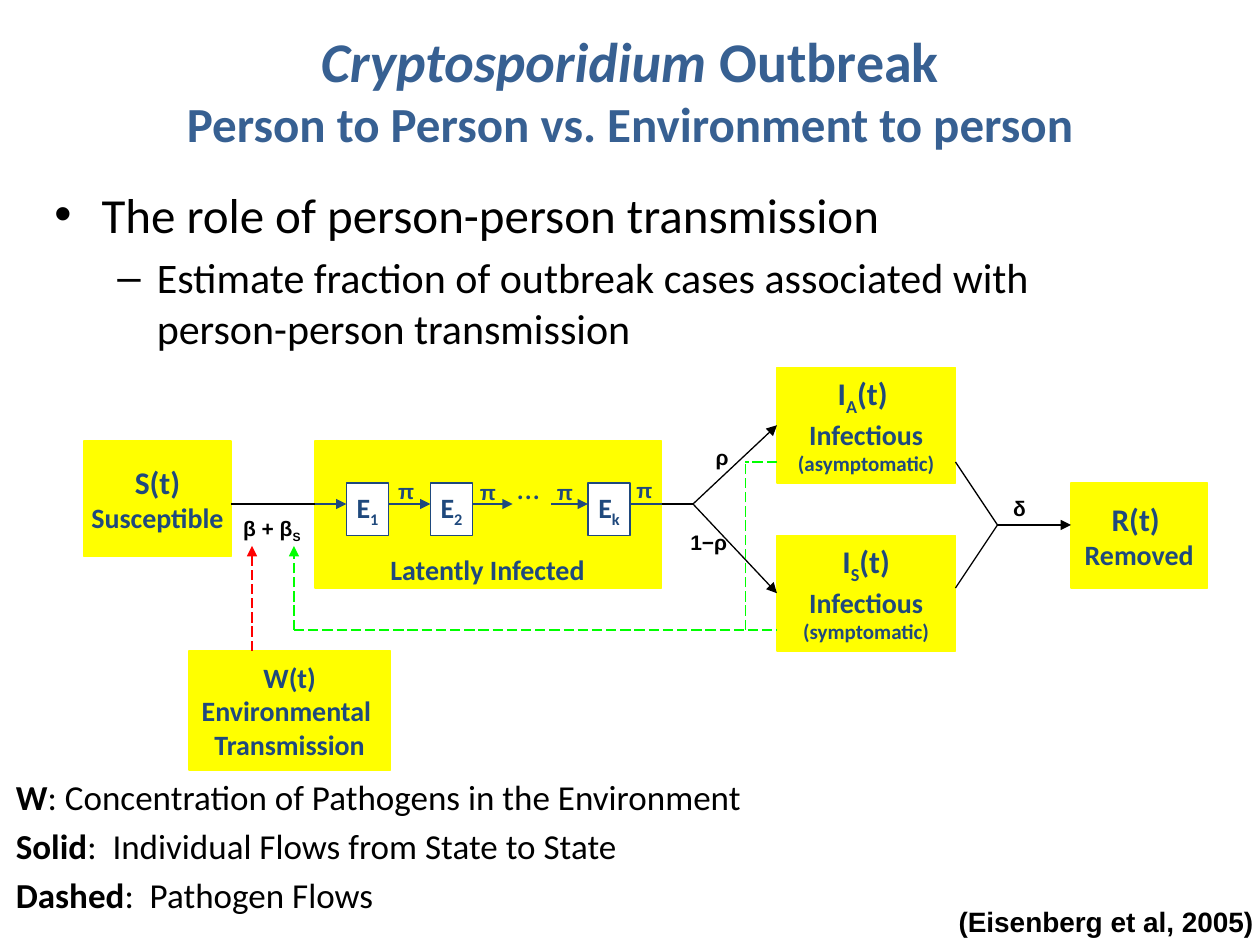
from dataclasses import dataclass

from lxml.etree import SubElement
from pptx import Presentation
from pptx.dml.color import RGBColor
from pptx.enum.dml import MSO_LINE
from pptx.enum.shapes import MSO_CONNECTOR, MSO_SHAPE
from pptx.enum.text import MSO_ANCHOR, PP_ALIGN
from pptx.oxml.ns import qn
from pptx.util import Pt


@dataclass(frozen=True)
class Theme:
    title: str = "376092"
    navy: str = "1F497D"
    black: str = "000000"
    white: str = "FFFFFF"
    yellow: str = "FFFF00"
    red: str = "FF0000"
    green: str = "00FF00"
    font: str = "Calibri"
    label_font: str = "Arial"
    heading: int = 32
    subheading: int = 28
    bullet: int = 28
    subbullet: int = 24
    legend: int = 20
    state: int = 18
    name: int = 16
    small: int = 12
    line: float = 0.75


THEME = Theme()
FLOW_Y = 288
SPLIT = (396, FLOW_Y)
MERGE = (570, 300)
LEFT_SIDE = 1


def span(text, **changes):
    """A piece of a line whose format differs from the rest."""
    return text, changes


def sub(text):
    return span(text, subscript=True)


def write(frame, lines, align=PP_ALIGN.LEFT, space_before=0, line_spacing=None, **base):
    """Fill a frame; a line is a list of strings and spans, "\\v" breaks a line."""
    for index, pieces in enumerate(lines):
        paragraph = frame.add_paragraph() if index else frame.paragraphs[0]
        paragraph.alignment = align
        paragraph.space_before = Pt(space_before)
        if line_spacing:
            paragraph.line_spacing = line_spacing
        for piece in pieces:
            text, changes = piece if isinstance(piece, tuple) else (piece, {})
            if text == "\v":
                paragraph.add_line_break()
                continue
            look = {"size": THEME.name, "font": THEME.font, "color": THEME.navy,
                    "bold": False, "italic": False, **base, **changes}
            run = paragraph.add_run()
            run.text = text
            run.font.name = look["font"]
            run.font.size = Pt(look["size"])
            run.font.bold = look["bold"]
            run.font.italic = look["italic"]
            run.font.color.rgb = RGBColor.from_string(look["color"])
            if look.get("subscript"):
                run._r.get_or_add_rPr().set("baseline", "-25000")


def add_text(slide, place, lines, inset=None, wrap=True, **look):
    frame = slide.shapes.add_textbox(*map(Pt, place)).text_frame
    frame.word_wrap = wrap
    if inset is not None:
        frame.margin_left = frame.margin_right = Pt(inset)
        frame.margin_top = frame.margin_bottom = Pt(inset)
    write(frame, lines, **look)
    return frame


def add_label(slide, left, top, pieces, width=12.24, color=THEME.black):
    add_text(slide, (left, top, width, 18.72), [pieces], inset=0.72,
             size=THEME.small, font=THEME.label_font, bold=True, color=color)


def add_box(slide, place, lines=(), fill=THEME.yellow, outline=THEME.yellow):
    box = slide.shapes.add_shape(MSO_SHAPE.RECTANGLE, *map(Pt, place))
    box.shadow.inherit = False
    box.fill.solid()
    box.fill.fore_color.rgb = RGBColor.from_string(fill)
    box.line.color.rgb = RGBColor.from_string(outline)
    box.line.width = Pt(THEME.line)
    box.text_frame.word_wrap = False
    box.text_frame.vertical_anchor = MSO_ANCHOR.MIDDLE
    write(box.text_frame, lines, align=PP_ALIGN.CENTER, bold=True)
    return box


def add_flow(slide, start, end, color=THEME.black, arrow=True, dashed=False):
    flow = slide.shapes.add_connector(MSO_CONNECTOR.STRAIGHT, *map(Pt, (*start, *end)))
    flow.line.color.rgb = RGBColor.from_string(color)
    flow.line.width = Pt(THEME.line)
    if dashed:
        flow.line.dash_style = MSO_LINE.LONG_DASH
    properties = flow.element.spPr
    if arrow:
        SubElement(properties.find(qn("a:ln")), qn("a:tailEnd"), type="triangle")
    SubElement(properties, qn("a:effectLst"))
    return flow


def add_title(slide):
    title = slide.shapes.title
    title.left, title.top, title.width, title.height = map(Pt, (36, 6, 648, 90))
    title.text_frame.vertical_anchor = MSO_ANCHOR.MIDDLE
    write(title.text_frame,
          [[span("Cryptosporidium", italic=True), " Outbreak", "\v",
            span("Person to Person vs. Environment to person", size=THEME.subheading)]],
          align=PP_ALIGN.CENTER, size=THEME.heading, bold=True, color=THEME.title)


def add_bullets(slide):
    frame = add_text(
        slide, (24, 102, 648, 114),
        [[span("The role of person-person transmission", size=THEME.bullet)],
         ["Estimate fraction of outbreak cases associated with person-person transmission"]],
        size=THEME.subbullet, color=THEME.black)
    levels = (("•", 27, 27, THEME.bullet), ("–", 58.5, 22.5, THEME.subbullet))
    for level, (mark, indent, hanging, size) in enumerate(levels):
        paragraph = frame.paragraphs[level]
        paragraph.level = level
        paragraph.space_before = Pt(0.2 * size)
        properties = paragraph._p.get_or_add_pPr()
        properties.set("marL", str(Pt(indent)))
        properties.set("indent", str(-Pt(hanging)))
        SubElement(properties, qn("a:buFont"), typeface="Arial")
        SubElement(properties, qn("a:buChar"), char=mark)


def add_states(slide):
    """Draw the compartments and return the two infectious ones."""
    def state(*pieces):
        return [span(p, size=THEME.state) if isinstance(p, str)
                else span(p[0], size=THEME.state, **p[1]) for p in pieces]

    add_box(slide, (180, 252, 198, 84))
    add_box(slide, (48, 252, 84, 66), [state("S(t)"), ["Susceptible"]])
    for left, stage in ((198, "1"), (246, "2"), (336, "k")):
        add_box(slide, (left, 276, 24, 30), [["E", sub(stage)]], THEME.white, THEME.navy)
    add_box(slide, (612, 276, 78, 60), [state("R(t) "), ["Removed"]])
    add_box(slide, (108, 372, 115, 68), [["W(t)"], ["Environmental "], ["Transmission"]])
    return [add_box(slide, (444, top, 102, 66),
                    [state("I", sub(mark), tail), ["Infectious"],
                     [span(kind, size=THEME.small)]])
            for top, mark, tail, kind in ((210, "A", "(t) ", "(asymptomatic)"),
                                          (306, "S", "(t)", "(symptomatic)"))]


def add_flows(slide, infectious):
    for start, end, color, arrow in (
            (132, 180, THEME.black, False), (180, 198, THEME.navy, True),
            (222, 246, THEME.navy, True), (270, 293, THEME.navy, True),
            (315, 336, THEME.navy, True), (360, 378, THEME.navy, False),
            (378, SPLIT[0], THEME.black, False)):
        add_flow(slide, (start, FLOW_Y), (end, FLOW_Y), color, arrow)
    for box in infectious:
        add_flow(slide, SPLIT, SPLIT).end_connect(box, LEFT_SIDE)
    for exit_y in (264, 336):
        add_flow(slide, (546, exit_y), MERGE, arrow=False)
    add_flow(slide, MERGE, (612, MERGE[1]))
    for start, end, color, arrow in (
            ((144, 372), (144, 312), THEME.red, True),
            ((168, 360), (168, 312), THEME.green, True),
            ((168, 360), (444, 360), THEME.green, False),
            ((426, 360), (426, 264), THEME.green, False),
            ((444, 264), (426, 264), THEME.green, False)):
        add_flow(slide, start, end, color, arrow, dashed=True)


def add_labels(slide):
    add_text(slide, (288, 264, 32.4, 36), [["..."]], size=THEME.state)
    add_text(slide, (216, 312, 168, 26.6), [["Latently Infected"]], bold=True)
    for left, top in ((226.8, 272.9), (273.6, 273.6), (317.5, 273.6), (362.9, 272.2)):
        add_label(slide, left, top, ["π"], color=THEME.navy)
    add_label(slide, 138.2, 293.8, ["β + β", sub("S")], width=57.6)
    add_label(slide, 578.2, 282.2, ["δ"])
    add_label(slide, 408.2, 253.4, ["ρ"])
    add_label(slide, 393.8, 301.7, ["1−ρ"], width=26.6)


def add_legend(slide):
    terms = (("W", ": Concentration of Pathogens in the Environment"),
             ("Solid", ":  Individual Flows from State to State"),
             ("Dashed", ":  Pathogen Flows"))
    add_text(slide, (2, 445, 441.4, 99),
             [[span(term, bold=True), meaning] for term, meaning in terms],
             size=THEME.legend, color=THEME.black, space_before=10, line_spacing=0.75)
    add_text(slide, (540.7, 513.4, 185, 26.6), [["(Eisenberg et al, 2005)"]], wrap=False,
             font=THEME.label_font, bold=True, color=THEME.black)


def main():
    deck = Presentation()
    deck.slide_width, deck.slide_height = Pt(720), Pt(540)
    slide = deck.slides.add_slide(deck.slide_layouts[5])
    add_title(slide)
    add_flows(slide, add_states(slide))
    add_labels(slide)
    add_legend(slide)
    add_bullets(slide)
    deck.save("out.pptx")


if __name__ == "__main__":
    main()
